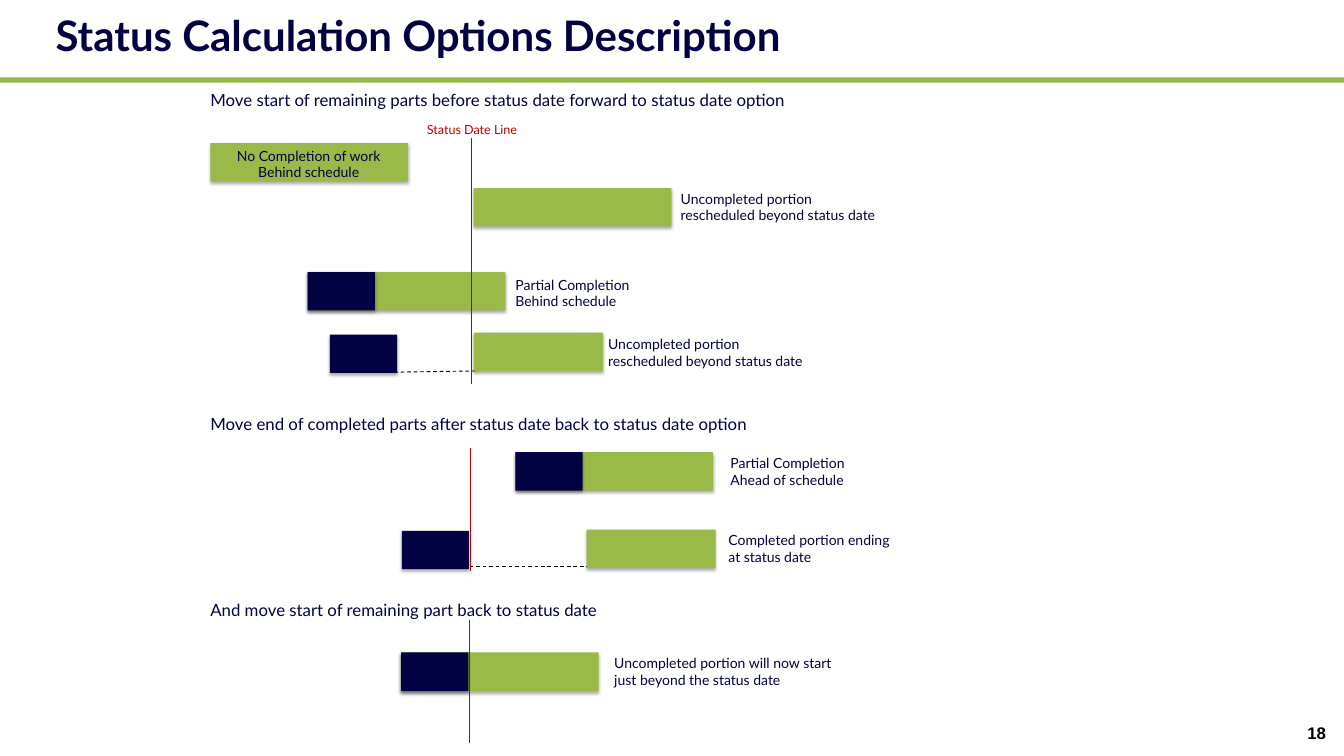
from typing import NamedTuple

from pptx import Presentation
from pptx.dml.color import RGBColor
from pptx.enum.dml import MSO_LINE
from pptx.enum.shapes import MSO_CONNECTOR, MSO_SHAPE
from pptx.enum.text import MSO_ANCHOR, PP_ALIGN
from pptx.oxml import parse_xml
from pptx.oxml.ns import nsdecls, qn
from pptx.util import Inches, Pt

STRAIGHT, RECT, DASH = MSO_CONNECTOR.STRAIGHT, MSO_SHAPE.RECTANGLE, MSO_LINE.DASH
LEFT, CENTER, RIGHT = PP_ALIGN.LEFT, PP_ALIGN.CENTER, PP_ALIGN.RIGHT
TOP, MIDDLE = MSO_ANCHOR.TOP, MSO_ANCHOR.MIDDLE

COLORS = {"green": "99B948", "navy": "020242", "red": "C00000", "black": "000000"}
BAR_H, FULL_W, DONE_W = 0.57, 2.94, 1.0
REST_W = 1.92


class Bar(NamedTuple):
    x: float
    y: float
    w: float
    color: str


class Rule(NamedTuple):
    x1: float
    y1: float
    x2: float
    y2: float
    color: str
    width: float
    dashed: bool = False


class Label(NamedTuple):
    x: float
    y: float
    w: float
    h: float
    lines: tuple[str, ...]
    size: float = 15
    color: str = "navy"
    align: PP_ALIGN = LEFT
    font: str = "Lato"
    bold: bool = False
    inset: tuple[float, float] = (0, 0)
    anchor: MSO_ANCHOR = TOP
    spacing: float = 1.0


def partial_task(x: float, y: float) -> list[Bar]:
    """A full-length task whose first part is completed."""
    return [Bar(x, y, FULL_W, "green"), Bar(x, y, DONE_W, "navy")]


def heading(y: float, text: str) -> Label:
    return Label(3.13, y, 8.71, 0.3, (text,), size=18)


def status_line(x: float, y1: float, y2: float) -> Rule:
    return Rule(x, y1, x, y2, "red", 1.5)


def split_link(x1: float, y1: float, x2: float, y2: float) -> Rule:
    """Dashed link between the two parts of a split task."""
    return Rule(x1, y1, x2, y2, "black", 1, True)


RESCHEDULED = ("Uncompleted portion", "rescheduled beyond status date")

SPLIT_LINKS = [split_link(5.77, 5.54, 7.08, 5.52), split_link(6.7, 8.43, 9, 8.43)]
BARS = [
    Bar(3.13, 2.13, FULL_W, "green"),
    Bar(7.05, 2.8, FULL_W, "green"),
    *partial_task(4.58, 4.05),
    Bar(4.91, 4.98, DONE_W, "navy"),
    Bar(7.05, 4.95, REST_W, "green"),
    *partial_task(7.67, 6.73),
    Bar(5.98, 7.9, DONE_W, "navy"),
    Bar(8.73, 7.88, REST_W, "green"),
    *partial_task(5.97, 9.71),
]
STATUS_LINES = [
    status_line(7.02, 2.06, 5.72),
    status_line(7, 6.67, 8.5),
    status_line(6.99, 9.23, 11.06),
]
LABELS = [
    Label(0.73, 0, 18.56, 1.12, ("Status Calculation Options Description",), size=45,
          bold=True, inset=(0.1, 0.05), anchor=MIDDLE, spacing=0.9),
    heading(1.34, "Move start of remaining parts before status date forward to status date option"),
    Label(5.99, 1.81, 2.07, 0.23, ("Status Date Line",), size=13.5, color="red", align=CENTER),
    Label(3.43, 2.19, 2.33, 0.5, ("No Completion of work", "Behind schedule"), align=CENTER),
    Label(10.13, 2.83, 3.26, 0.5, RESCHEDULED),
    Label(7.67, 4.11, 1.94, 0.5, ("Partial Completion", "Behind schedule")),
    Label(9.05, 4.99, 3.26, 0.5, RESCHEDULED),
    heading(6.15, "Move end of completed parts after status date back to status date option"),
    Label(10.87, 6.77, 1.94, 0.5, ("Partial Completion", "Ahead of schedule")),
    Label(10.84, 7.91, 2.56, 0.5, ("Completed portion ending at status date",)),
    heading(8.92, "And move start of remaining part back to status date"),
    Label(9.14, 9.74, 3.39, 0.5,
          ("Uncompleted portion will now start just beyond the status date",)),
    Label(17.66, 10.7, 2.17, 0.34, ("18",), size=18, color="black", align=RIGHT,
          font="Arial", bold=True, inset=(0.1, 0.05)),
]


def rgb(name: str) -> RGBColor:
    return RGBColor.from_string(COLORS[name])


def draw_rect(s, x: float, y: float, w: float, h: float, color: str):
    shape = s.shapes.add_shape(RECT, Inches(x), Inches(y), Inches(w), Inches(h))
    shape.fill.solid()
    shape.fill.fore_color.rgb = rgb(color)
    shape.line.fill.background()
    shape.shadow.inherit = False
    return shape


def draw_bar(s, bar: Bar) -> None:
    shape = draw_rect(s, bar.x, bar.y, bar.w, BAR_H, bar.color)
    effects = shape.element.spPr.find(qn("a:effectLst"))
    effects.append(parse_xml(
        f'<a:outerShdw {nsdecls("a")} blurRad="{Pt(3.5)}" dist="{Pt(2.2)}" dir="5400000"'
        ' rotWithShape="0"><a:srgbClr val="000000"><a:alpha val="32000"/></a:srgbClr>'
        '</a:outerShdw>'))


def draw_rule(s, rule: Rule) -> None:
    line = s.shapes.add_connector(STRAIGHT, Inches(rule.x1), Inches(rule.y1),
                                  Inches(rule.x2), Inches(rule.y2))
    line.line.color.rgb = rgb(rule.color)
    line.line.width = Pt(rule.width)
    if rule.dashed:
        line.line.dash_style = DASH
    line.element.spPr.append(parse_xml(f'<a:effectLst {nsdecls("a")}/>'))


def draw_label(s, label: Label) -> None:
    box = s.shapes.add_textbox(Inches(label.x), Inches(label.y), Inches(label.w), Inches(label.h))
    tf = box.text_frame
    tf.word_wrap = True
    tf.vertical_anchor = label.anchor
    tf.margin_left = tf.margin_right = Inches(label.inset[0])
    tf.margin_top = tf.margin_bottom = Inches(label.inset[1])
    for i, line in enumerate(label.lines):
        p = tf.add_paragraph() if i else tf.paragraphs[0]
        p.alignment = label.align
        p.line_spacing = label.spacing
        r = p.add_run()
        r.text = line
        r.font.name = label.font
        r.font.size = Pt(label.size)
        r.font.bold = label.bold
        r.font.color.rgb = rgb(label.color)


def main() -> None:
    prs = Presentation()
    prs.slide_width, prs.slide_height = Inches(20), Inches(11.25)
    s = prs.slides.add_slide(prs.slide_layouts[6])
    draw_rect(s, 0, 1.15, 20, 0.08, "green")
    for link in SPLIT_LINKS:
        draw_rule(s, link)
    for bar in BARS:
        draw_bar(s, bar)
    for line in STATUS_LINES:
        draw_rule(s, line)
    for label in LABELS:
        draw_label(s, label)
    prs.save("out.pptx")


if __name__ == "__main__":
    main()
